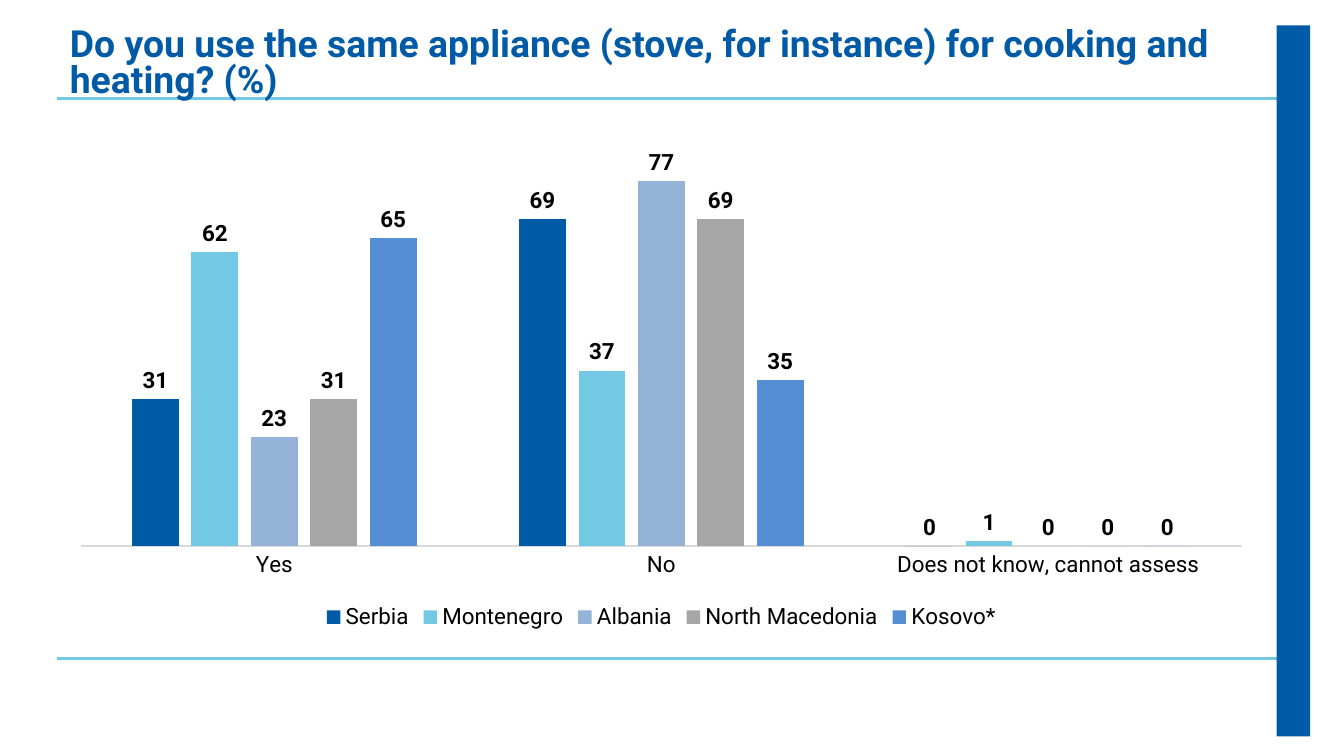
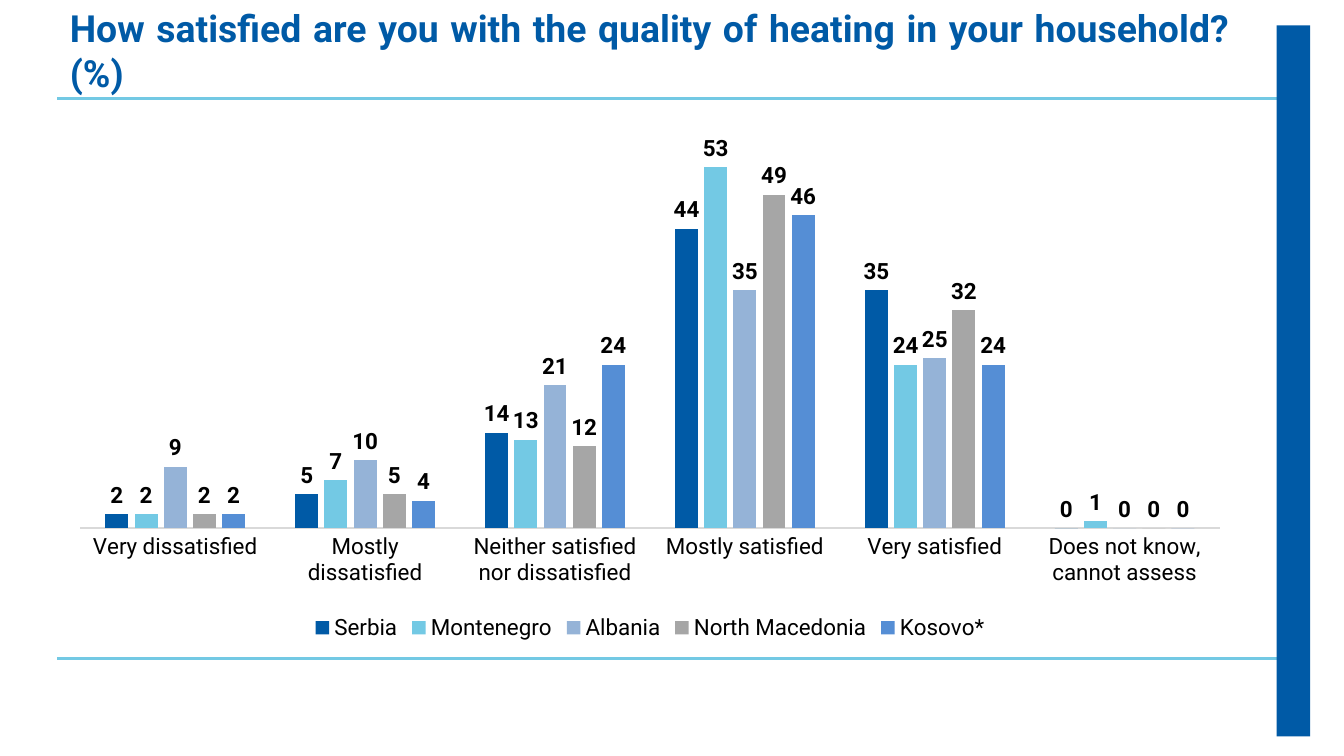
from dataclasses import dataclass

from lxml.etree import SubElement
from pptx import Presentation
from pptx.chart.data import CategoryChartData
from pptx.dml.color import RGBColor
from pptx.enum.chart import XL_CHART_TYPE, XL_LABEL_POSITION, XL_LEGEND_POSITION, XL_TICK_MARK
from pptx.enum.shapes import MSO_CONNECTOR, MSO_SHAPE
from pptx.enum.text import MSO_ANCHOR, PP_ALIGN
from pptx.oxml.ns import qn
from pptx.util import Cm, Pt


@dataclass(frozen=True)
class Theme:
    """Colours, font and type sizes of the deck."""
    font: str = "Roboto"
    navy: RGBColor = RGBColor(0x00, 0x5A, 0xA6)
    sky: RGBColor = RGBColor(0x73, 0xC9, 0xE4)
    mist: RGBColor = RGBColor(0x95, 0xB3, 0xD7)
    grey: RGBColor = RGBColor(0xA6, 0xA6, 0xA6)
    azure: RGBColor = RGBColor(0x55, 0x8E, 0xD5)
    axis: RGBColor = RGBColor(0xD9, 0xD9, 0xD9)
    ink: RGBColor = RGBColor(0, 0, 0)
    title_size: Pt = Pt(20)
    chart_size: Pt = Pt(12)
    rule_width: Pt = Pt(1.5)


@dataclass(frozen=True)
class Box:
    """A region in centimetres."""
    left: float
    top: float
    width: float
    height: float

    def lengths(self):
        """Return the region as slide lengths."""
        return Cm(self.left), Cm(self.top), Cm(self.width), Cm(self.height)


THEME = Theme()
PAGE = Box(0, 0, 25.4, 14.29)
MARGIN = 1.07
COUNTRIES = {
    "Serbia": THEME.navy,
    "Montenegro": THEME.sky,
    "Albania": THEME.mist,
    "North Macedonia": THEME.grey,
    "Kosovo*": THEME.azure,
}
QUESTIONS = [
    {
        "title": "Do you use the same appliance (stove, for instance) for cooking and heating? (%)",
        "title_box": Box(MARGIN, 0.58, 22.86, 1.3),
        "title_format": {"line_spacing": 0.8},
        "chart_box": Box(MARGIN, 2.06, 22.86, 9.96),
        "plot_height": 0.81,
        "top_value": 90,
        "answers": {
            "Yes": (31, 62, 23, 31, 65),
            "No": (69, 37, 77, 69, 35),
            "Does not know, cannot assess": (0, 1, 0, 0, 0),
        },
    },
    {
        "title": "How satisfied are you with the quality of heating in your household? (%)",
        "title_box": Box(MARGIN, 0.38, 22.43, 1.14),
        "title_format": {"alignment": PP_ALIGN.JUSTIFY},
        "chart_box": Box(MARGIN, 2.06, 22.43, 10.16),
        "plot_height": 0.76,
        "top_value": 60,
        "answers": {
            "Very dissatisfied": (2, 2, 9, 2, 2),
            "Mostly dissatisfied": (5, 7, 10, 5, 4),
            "Neither satisfied nor dissatisfied": (14, 13, 21, 12, 24),
            "Mostly satisfied": (44, 53, 35, 49, 46),
            "Very satisfied": (35, 24, 25, 32, 24),
            "Does not know, cannot assess": (0, 1, 0, 0, 0),
        },
    },
]


def style_font(font, size, color, bold=False):
    """Apply the deck font with a size, colour and weight."""
    font.name = THEME.font
    font.size = size
    font.color.rgb = color
    font.bold = bold


def draw_frame(slide, box):
    """Draw the two rules and the band on the right of the page."""
    for offset in (1.86, 12.44):
        height = Cm(box.top + offset)
        rule = slide.shapes.add_connector(
            MSO_CONNECTOR.STRAIGHT, Cm(box.left + box.width - 0.74), height,
            Cm(box.left + MARGIN), height)
        rule.line.color.rgb = THEME.sky
        rule.line.width = THEME.rule_width
        SubElement(rule.element.spPr, qn("a:effectLst"))
    band_box = Box(box.left + box.width - 1.27, box.top + 0.48, 0.63, 13.44)
    band = slide.shapes.add_shape(MSO_SHAPE.RECTANGLE, *band_box.lengths())
    band.shadow.inherit = False
    band.fill.solid()
    band.fill.fore_color.rgb = THEME.navy
    band.line.fill.background()


def draw_title(slide, box, wording, line_spacing=None, alignment=None):
    """Write the question in its box."""
    frame = slide.shapes.add_textbox(*box.lengths()).text_frame
    frame.word_wrap = True
    frame.vertical_anchor = MSO_ANCHOR.MIDDLE
    frame.text = wording
    question = frame.paragraphs[0]
    question.line_spacing = line_spacing
    question.alignment = alignment
    style_font(question.runs[0].font, THEME.title_size, THEME.navy, True)


def place_plot(chart, **fractions):
    """Fix the inner plot area as fractions of the chart."""
    plot_area = chart.element.find(".//" + qn("c:plotArea"))
    layout = plot_area.find(qn("c:layout"))
    if layout is None:
        layout = SubElement(plot_area, qn("c:layout"))
        plot_area.insert(0, layout)
    manual = SubElement(layout, qn("c:manualLayout"))
    settings = {"layoutTarget": "inner", "xMode": "edge", "yMode": "edge", **fractions}
    for tag, value in settings.items():
        SubElement(manual, qn(f"c:{tag}")).set("val", str(value))


def draw_chart(slide, box, answers, top_value, plot_height):
    """Chart the share of each answer by country."""
    shares = CategoryChartData(number_format="0")
    shares.categories = list(answers)
    for country, values in zip(COUNTRIES, zip(*answers.values())):
        shares.add_series(country, values)
    chart = slide.shapes.add_chart(
        XL_CHART_TYPE.COLUMN_CLUSTERED, *box.lengths(), shares).chart
    chart.has_title = False
    style_font(chart.font, THEME.chart_size, THEME.ink)
    chart.has_legend = True
    chart.legend.position = XL_LEGEND_POSITION.BOTTOM
    chart.legend.include_in_layout = False
    style_font(chart.legend.font, THEME.chart_size, THEME.ink)

    answer_axis = chart.category_axis
    answer_axis.major_tick_mark = XL_TICK_MARK.NONE
    answer_axis.format.line.color.rgb = THEME.axis
    answer_axis.format.line.width = Pt(0.75)
    style_font(answer_axis.tick_labels.font, THEME.chart_size, THEME.ink)
    share_axis = chart.value_axis
    share_axis.visible = False
    share_axis.has_major_gridlines = False
    share_axis.minimum_scale = 0
    share_axis.maximum_scale = top_value

    columns = chart.plots[0]
    columns.gap_width = 219
    columns.overlap = -27
    columns.vary_by_categories = False
    for country, color in zip(columns.series, COUNTRIES.values()):
        country.format.fill.solid()
        country.format.fill.fore_color.rgb = color
        country.invert_if_negative = False
        labels = country.data_labels
        labels.show_value = True
        labels.position = XL_LABEL_POSITION.OUTSIDE_END
        style_font(labels.font, THEME.chart_size, THEME.ink, True)
    place_plot(chart, x=0.02, y=0.02, w=0.96, h=plot_height)


def draw_question(slide, box, question):
    """Build one survey question slide."""
    draw_frame(slide, box)
    draw_title(slide, question["title_box"], question["title"], **question["title_format"])
    draw_chart(slide, question["chart_box"], question["answers"],
               question["top_value"], question["plot_height"])


def main():
    """Build and save the deck."""
    deck = Presentation()
    deck.slide_width, deck.slide_height = Cm(PAGE.width), Cm(PAGE.height)
    for question in QUESTIONS:
        draw_question(deck.slides.add_slide(deck.slide_layouts[6]), PAGE, question)
    deck.save("out.pptx")


if __name__ == "__main__":
    main()
